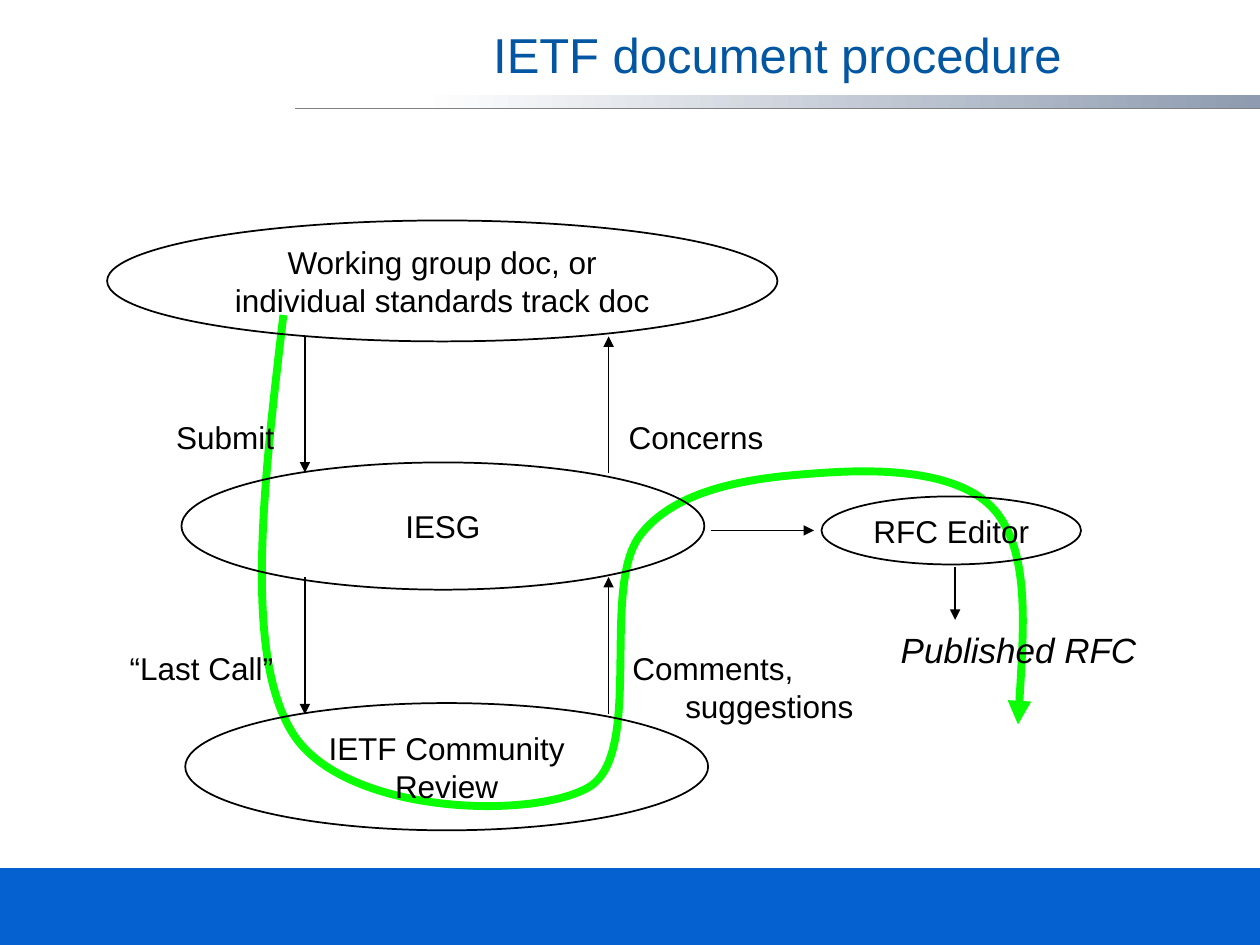
import pptx
import pptx.dml.color
import pptx.enum.shapes
import pptx.enum.text
import pptx.oxml
import pptx.oxml.ns
import pptx.util
from pptx.util import Inches

COLORS = {
    "ink": "000000", "title": "0256A2", "footer": "0661D0", "rule": "808080",
    "path": "0AFF04", "band": "8E9BB0", "white": "FFFFFF",
}
SHAPES = pptx.enum.shapes.MSO_SHAPE
ALIGN = pptx.enum.text.PP_ALIGN
ANCHOR = pptx.enum.text.MSO_ANCHOR


def rgb(name):
    return pptx.dml.color.RGBColor.from_string(COLORS[name])


def write(tf, text, size=18, color="ink", align=ALIGN.LEFT, anchor=ANCHOR.TOP,
          italic=False, wrap=False, indents=()):
    tf.word_wrap = wrap
    tf.vertical_anchor = anchor
    for i, line in enumerate(text.split("\n")):
        p = tf.add_paragraph() if i else tf.paragraphs[0]
        p.alignment = align
        if i < len(indents):
            p._p.get_or_add_pPr().set("marL", str(Inches(indents[i])))
        r = p.add_run()
        r.text = line
        r.font.name = "Arial"
        r.font.size = pptx.util.Pt(size)
        r.font.italic = italic
        r.font.color.rgb = rgb(color)


class Diagram:
    """Draws the elements of a procedure diagram on one slide in a shared style."""

    def __init__(self, s, line_width=1):
        self.s = s
        self.line_width = line_width

    def stroke(self, sp, color="ink", width=None, arrow=False):
        sp.line.color.rgb = rgb(color)
        sp.line.width = pptx.util.Pt(width or self.line_width)
        if arrow:
            end = pptx.oxml.parse_xml(
                '<a:tailEnd %s type="triangle"/>' % pptx.oxml.ns.nsdecls("a"))
            sp.line._get_or_add_ln().append(end)

    def shape(self, kind, left, top, width, height):
        sp = self.s.shapes.add_shape(
            kind, Inches(left), Inches(top), Inches(width), Inches(height))
        sp.shadow.inherit = False
        return sp

    def bar(self, left, top, width, height, color, fade=None):
        sp = self.shape(SHAPES.RECTANGLE, left, top, width, height)
        sp.line.fill.background()
        if fade is None:
            sp.fill.solid()
            sp.fill.fore_color.rgb = rgb(color)
            return
        sp.fill.gradient()
        sp.fill.gradient_angle = 180
        for stop, name, position in zip(sp.fill.gradient_stops, (color, fade), (0, 0.88)):
            stop.color.rgb = rgb(name)
            stop.position = position

    def ellipse(self, text, left, top, width, height):
        sp = self.shape(SHAPES.OVAL, left, top, width, height)
        sp.fill.background()
        self.stroke(sp)
        write(sp.text_frame, text, align=ALIGN.CENTER, anchor=ANCHOR.MIDDLE)

    def label(self, text, left, top, width, height, **style):
        sp = self.s.shapes.add_textbox(
            Inches(left), Inches(top), Inches(width), Inches(height))
        write(sp.text_frame, text, **style)

    def line(self, x1, y1, x2, y2, arrow=True, **style):
        sp = self.s.shapes.add_connector(
            pptx.enum.shapes.MSO_CONNECTOR.STRAIGHT,
            Inches(x1), Inches(y1), Inches(x2), Inches(y2))
        self.stroke(sp, arrow=arrow, **style)
        sp._element.spPr.append(pptx.oxml.parse_xml(
            "<a:effectLst %s/>" % pptx.oxml.ns.nsdecls("a")))

    def curve(self, points, **style):
        points = [(Inches(x), Inches(y)) for x, y in points]
        builder = self.s.shapes.build_freeform(*points[0])
        builder.add_line_segments(points[1:], close=False)
        sp = builder.convert_to_shape()
        sp.shadow.inherit = False
        sp.fill.background()
        segments = list(sp._element.iter(pptx.oxml.ns.qn("a:lnTo")))
        for i in range(0, len(segments), 3):
            bezier = pptx.oxml.parse_xml(
                "<a:cubicBezTo %s/>" % pptx.oxml.ns.nsdecls("a"))
            segments[i].addprevious(bezier)
            for segment in segments[i:i + 3]:
                bezier.append(segment[0])
                segment.getparent().remove(segment)
        self.stroke(sp, arrow=True, **style)


def main():
    prs = pptx.Presentation()
    prs.slide_width, prs.slide_height = Inches(10), Inches(7.5)
    d = Diagram(prs.slides.add_slide(prs.slide_layouts[6]))

    d.bar(2.42, 0.75, 7.58, 0.11, "band", fade="white")
    d.bar(0, 6.89, 10, 0.61, "footer")
    d.line(2.34, 0.86, 10, 0.86, arrow=False, color="rule", width=0.75)
    d.curve([
        (2.25, 2.5),
        (2.09, 3.85), (1.93, 5.21), (2.33, 5.83),
        (2.74, 6.46), (4.21, 6.51), (4.67, 6.25),
        (5.12, 5.99), (4.76, 4.67), (5.08, 4.25),
        (5.4, 3.83), (6.11, 3.78), (6.58, 3.75),
        (7.06, 3.72), (7.67, 3.75), (7.92, 4.08),
        (8.17, 4.42), (8.12, 5.08), (8.08, 5.75),
    ], color="path", width=4.5)
    d.label("IETF document procedure", 2.34, 0, 7.66, 0.86, size=28, color="title",
            align=ALIGN.CENTER, anchor=ANCHOR.MIDDLE, wrap=True)

    d.ellipse("Working group doc, or\nindividual standards track doc", 0.85, 1.75, 5.32, 0.96)
    d.ellipse("IESG", 1.44, 3.67, 4.15, 1.01)
    d.ellipse("RFC Editor", 6.52, 3.94, 2.06, 0.54)
    d.ellipse("IETF Community\nReview", 1.47, 5.58, 4.15, 1.01)

    for top, bottom in ((2.67, 3.75), (4.58, 5.67)):
        d.line(2.42, top, 2.42, bottom)
        d.line(4.83, bottom, 4.83, top)
    d.line(5.64, 4.21, 6.46, 4.21)
    d.line(7.58, 4.5, 7.58, 4.92)

    d.label("Submit", 1.3, 3.27, 1.05, 0.4)
    d.label("Concerns", 4.89, 3.27, 1.35, 0.4)
    d.label("“Last Call”", 0.93, 5.1, 1.49, 0.4)
    d.label("Comments,\nsuggestions", 4.92, 5.1, 2.09, 0.7, indents=(0, 0.42))
    d.label("Published RFC", 7.05, 4.94, 2.18, 0.43, size=20, italic=True)

    prs.save("out.pptx")


if __name__ == "__main__":
    main()
